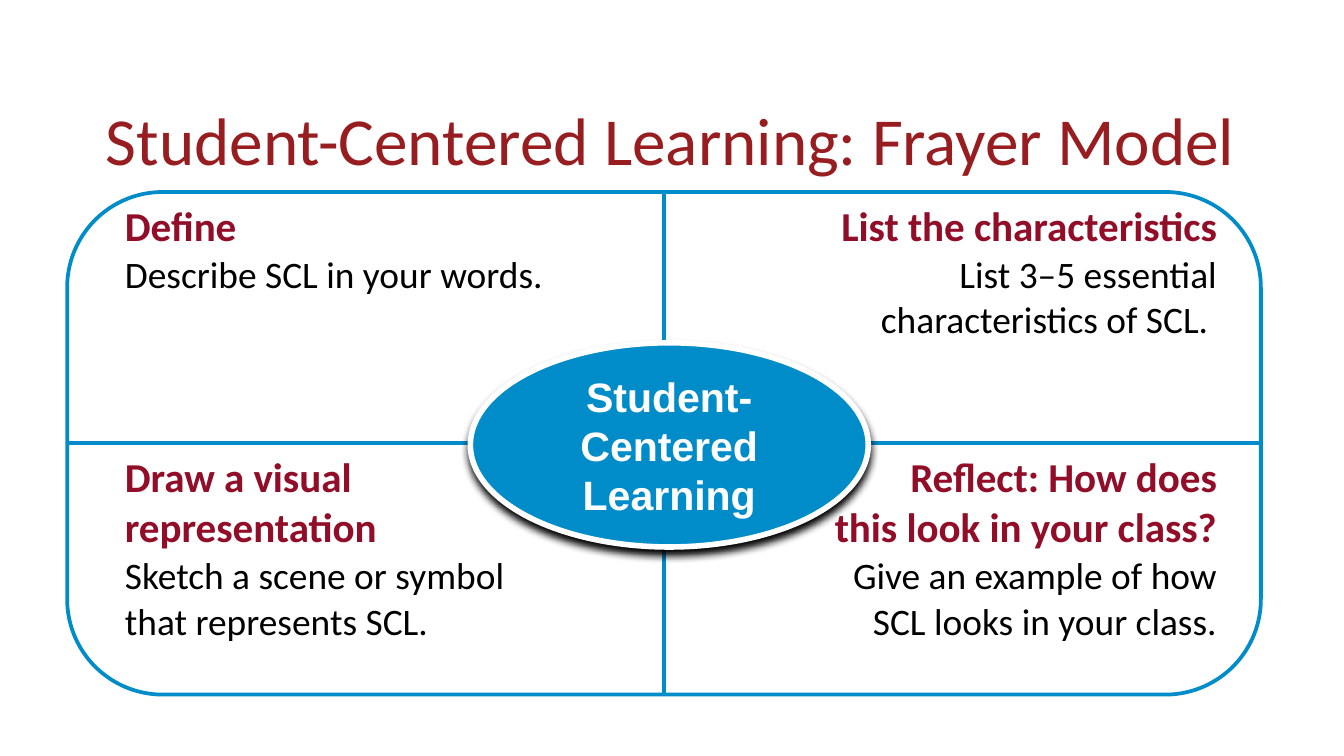
from lxml.etree import SubElement
from pptx import Presentation
from pptx.dml.color import RGBColor
from pptx.enum.shapes import MSO_CONNECTOR, MSO_SHAPE
from pptx.enum.text import MSO_ANCHOR, PP_ALIGN
from pptx.oxml.ns import qn
from pptx.util import Cm, Pt

BLUE, RED, WHITE, BLACK = "008CC9", "910D28", "FFFFFF", "000000"
NO_GRID = "{2D5ABB26-0587-4C30-8999-92F81FD0307C}"
LEFT, TOP, WIDE, HIGH = 1.27, 3.63, 22.56, 9.5
MID_X, MID_Y = LEFT + WIDE / 2, TOP + HIGH / 2

CELLS = [
    [("Define", "Describe SCL in your words."),
     ("List the characteristics",
      "List 3–5 essential\ncharacteristics of SCL. ")],
    [("Draw a visual\nrepresentation",
      "Sketch a scene or symbol\nthat represents SCL."),
     ("Reflect: How does\nthis look in your class?",
      "Give an example of how\nSCL looks in your class.")],
]


def color(code):
    return RGBColor.from_string(code)


def write(para, text, size, code, face="Calibri", bold=False,
          align=PP_ALIGN.LEFT):
    para.text = text
    para.alignment = align
    for run in para.runs:
        font = run.font
        font.name, font.size, font.bold = face, Pt(size), bold
        font.color.rgb = color(code)


def pad(box, gap):
    """Give a cell or text frame the same margin on all sides."""
    box.margin_left = box.margin_right = Cm(gap)
    box.margin_top = box.margin_bottom = Cm(gap)


def add_title(slide, text):
    box = slide.shapes.add_textbox(Cm(1.75), Cm(0.76), Cm(21.9), Cm(2.77))
    frame = box.text_frame
    frame.word_wrap = True
    frame.vertical_anchor = MSO_ANCHOR.BOTTOM
    para = frame.paragraphs[0]
    write(para, text, 36, "971D20")
    para.line_spacing = 0.9


def add_line(slide, x1, y1, x2, y2):
    line = slide.shapes.add_connector(
        MSO_CONNECTOR.STRAIGHT, Cm(x1), Cm(y1), Cm(x2), Cm(y2))
    line.line.color.rgb = color(BLUE)
    line.line.width = Pt(2.25)
    SubElement(line._element.spPr, qn("a:effectLst"))


def add_grid(slide):
    wide, high = 10.52, HIGH / 2
    frame = slide.shapes.add_table(
        2, 2, Cm(2.16), Cm(TOP), Cm(2 * wide), Cm(2 * high))
    table = frame.table
    table.first_row = table.horz_banding = False
    table._tbl.tblPr.find(qn("a:tableStyleId")).text = NO_GRID
    for row, texts in zip(table.rows, CELLS):
        row.height = Cm(high)
        for cell, (head, body), align in zip(
                row.cells, texts, (PP_ALIGN.LEFT, PP_ALIGN.RIGHT)):
            cell.fill.background()
            pad(cell, 0.2)
            frame = cell.text_frame
            write(frame.paragraphs[0], head, 22, RED, bold=True, align=align)
            write(frame.add_paragraph(), body, 20, BLACK, align=align)
    for col in table.columns:
        col.width = Cm(wide)


def add_shadow(shape):
    effects = SubElement(shape._element.spPr, qn("a:effectLst"))
    shade = SubElement(effects, qn("a:outerShdw"), blurRad=str(Pt(4.5)),
                       dist=str(Pt(3)), dir="5400000", rotWithShape="0")
    SubElement(shade, qn("a:srgbClr"), val=BLACK)


def add_topic(slide, text):
    oval = slide.shapes.add_shape(
        MSO_SHAPE.OVAL, Cm(8.89), Cm(6.48), Cm(7.52), Cm(3.86))
    oval.fill.solid()
    oval.fill.fore_color.rgb = color(BLUE)
    oval.line.color.rgb = color(WHITE)
    oval.line.width = Pt(3)
    add_shadow(oval)
    frame = oval.text_frame
    frame.word_wrap = True
    frame.vertical_anchor = MSO_ANCHOR.MIDDLE
    pad(frame, 0)
    write(frame.paragraphs[0], text, 22, WHITE, "Arial", True,
          PP_ALIGN.CENTER)


def add_border(slide):
    border = slide.shapes.add_shape(
        MSO_SHAPE.ROUNDED_RECTANGLE, Cm(LEFT), Cm(TOP), Cm(WIDE), Cm(HIGH))
    border.adjustments[0] = 0.19
    border.shadow.inherit = False
    border.fill.background()
    border.line.color.rgb = color(BLUE)
    border.line.width = Pt(2)


def main():
    deck = Presentation()
    deck.slide_width, deck.slide_height = Cm(25.4), Cm(14.29)
    slide = deck.slides.add_slide(deck.slide_layouts[6])
    add_title(slide, "Student-Centered Learning: Frayer Model")
    add_line(slide, MID_X, TOP, MID_X, TOP + HIGH)
    add_line(slide, LEFT, MID_Y, LEFT + WIDE, MID_Y)
    add_grid(slide)
    add_topic(slide, "Student-Centered Learning")
    add_border(slide)
    deck.save("out.pptx")


if __name__ == "__main__":
    main()
